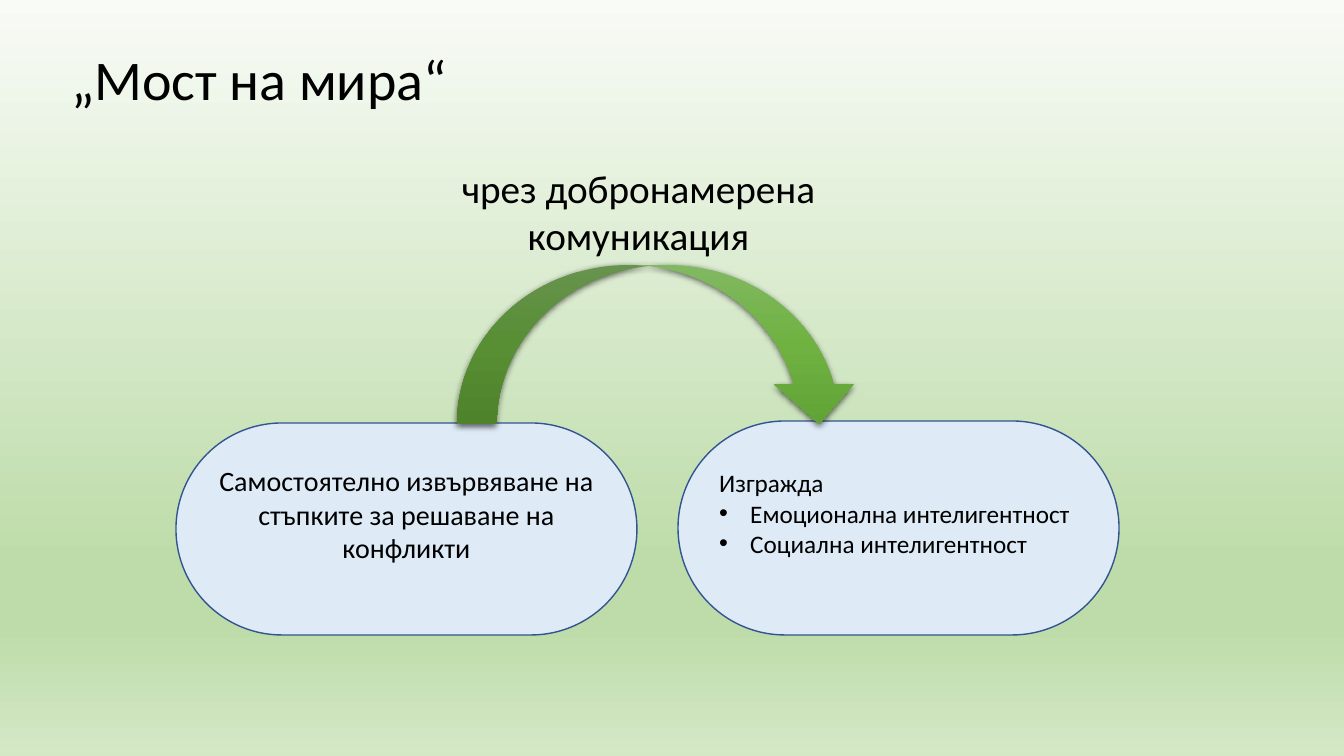
from lxml import etree
from pptx import Presentation
from pptx import util as u
from pptx.dml.color import RGBColor
from pptx.enum import shapes, text
from pptx.oxml.ns import qn

SLIDE_SIZE = (1344, 756)
EMU_PER_PX = 12192000 / SLIDE_SIZE[0]
FONT = "Calibri"
COLORS = {"text": "000000", "pill": "DEEBF7", "outline": "325491", "shadow": "000000"}
BACKGROUND_STOPS = [(0, "F8FBF6"), (74, "BEDCAA"), (83, "BEDCAA"), (100, "D4E8C6")]
ARROW_STOPS = [(0, "81B861"), (50, "6FB242"), (100, "62A336")]


def px(length):
    return u.Emu(round(length * EMU_PER_PX))


def color(name):
    return RGBColor.from_string(COLORS[name])


def add_color_node(parent, hex_color):
    return etree.SubElement(parent, qn("a:srgbClr"), val=hex_color)


def set_gradient(fill, element, stops):
    """Fill from top to bottom; element is the XML that holds the fill."""
    fill.gradient()
    fill.gradient_angle = 270
    stop_list = element.find(".//" + qn("a:gsLst"))
    for stop in list(stop_list):
        stop_list.remove(stop)
    for percent, hex_color in stops:
        stop = etree.SubElement(stop_list, qn("a:gs"), pos=str(percent * 1000))
        add_color_node(stop, hex_color)


def add_run(paragraph, words, size):
    run = paragraph.add_run()
    run.text = words
    run.font.name = FONT
    run.font.size = u.Pt(size)
    run.font.color.rgb = color("text")


def make_bullet(paragraph, indent):
    properties = paragraph._p.get_or_add_pPr()
    properties.set("marL", str(px(indent)))
    properties.set("indent", str(-px(indent)))
    etree.SubElement(properties, qn("a:buFont"), typeface="Arial")
    etree.SubElement(properties, qn("a:buChar"), char="•")


def place_title(slide, box, words):
    title = slide.shapes.title
    title.left, title.top, title.width, title.height = map(px, box)
    frame = title.text_frame
    frame.auto_size = text.MSO_AUTO_SIZE.NONE
    frame.vertical_anchor = text.MSO_ANCHOR.MIDDLE
    paragraph = frame.paragraphs[0]
    paragraph.alignment = text.PP_ALIGN.LEFT
    paragraph.line_spacing = 0.9
    add_run(paragraph, words, 40)


def add_caption(group, box, words):
    caption = group.shapes.add_textbox(*map(px, box))
    frame = caption.text_frame
    frame.word_wrap = True
    paragraph = frame.paragraphs[0]
    paragraph.alignment = text.PP_ALIGN.CENTER
    add_run(paragraph, words, 28)


def add_pill(group, box, lines, size, alignment):
    """Draw a pier of the bridge; every line after the first is a bullet."""
    pill = group.shapes.add_shape(shapes.MSO_SHAPE.ROUNDED_RECTANGLE, *map(px, box))
    pill.adjustments[0] = 0.5
    pill.shadow.inherit = False
    pill.fill.solid()
    pill.fill.fore_color.rgb = color("pill")
    pill.line.color.rgb = color("outline")
    pill.line.width = u.Pt(1)
    frame = pill.text_frame
    frame.word_wrap = True
    frame.vertical_anchor = text.MSO_ANCHOR.MIDDLE
    frame.margin_bottom = px(35)
    for index, words in enumerate(lines):
        paragraph = frame.add_paragraph() if index else frame.paragraphs[0]
        paragraph.alignment = alignment
        if index:
            make_bullet(paragraph, 31)
        add_run(paragraph, words, size)


def add_bridge_arrow(group, box):
    arrow = group.shapes.add_shape(shapes.MSO_SHAPE.CURVED_DOWN_ARROW, *map(px, box))
    set_gradient(arrow.fill, arrow.element, ARROW_STOPS)
    arrow.line.fill.background()
    arrow.shadow.inherit = False
    effects = arrow.element.spPr.find(qn("a:effectLst"))
    shadow = etree.SubElement(
        effects, qn("a:outerShdw"), blurRad=str(u.Pt(4.5)), dist=str(u.Pt(1.5)),
        dir="5400000", algn="ctr", rotWithShape="0")
    shadow_color = add_color_node(shadow, COLORS["shadow"])
    etree.SubElement(shadow_color, qn("a:alpha"), val="63000")


def add_bridge(slide, left, top):
    """Place the caption, both piers and the arrow from the given corner."""
    group = slide.shapes.add_group_shape()
    add_caption(group, (left + 275, top, 375, 105), "чрез добронамерена комуникация")
    add_pill(group, (left, top + 264, 461, 212),
             ["Самостоятелно извървяване на стъпките за решаване на конфликти"],
             20, text.PP_ALIGN.CENTER)
    add_pill(group, (left + 502, top + 262, 441, 214),
             ["Изгражда", "Емоционална интелигентност", "Социална интелигентност"],
             18, text.PP_ALIGN.LEFT)
    add_bridge_arrow(group, (left + 281, top + 106, 402, 159))


def main():
    presentation = Presentation()
    presentation.slide_width, presentation.slide_height = map(px, SLIDE_SIZE)
    slide = presentation.slides.add_slide(presentation.slide_layouts.get_by_name("Title Only"))
    set_gradient(slide.background.fill, slide.element, BACKGROUND_STOPS)
    place_title(slide, (61, 28, 1159, 109), "„Мост на мира“")
    add_bridge(slide, 176, 159)
    presentation.save("out.pptx")


if __name__ == "__main__":
    main()
